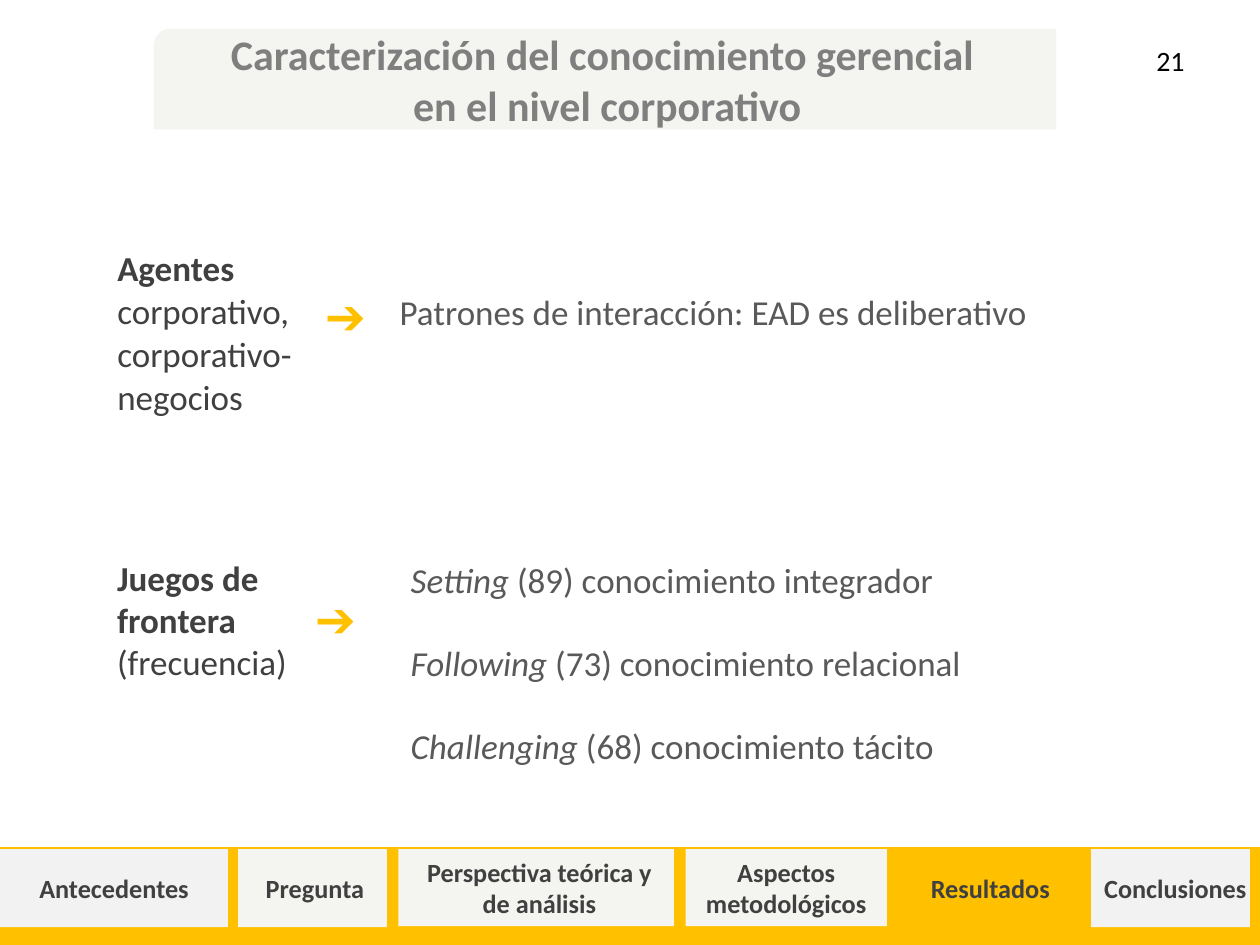
from lxml import etree
from pptx import Presentation
from pptx.dml.color import RGBColor
from pptx.enum.shapes import MSO_CONNECTOR, MSO_SHAPE
from pptx.enum.text import MSO_ANCHOR, PP_ALIGN
from pptx.oxml.ns import qn
from pptx.util import Cm, Pt

RECT, ROUND1 = MSO_SHAPE.RECTANGLE, MSO_SHAPE.ROUND_1_RECTANGLE
LINE = MSO_CONNECTOR.STRAIGHT
TOP, MIDDLE, BOTTOM = MSO_ANCHOR.TOP, MSO_ANCHOR.MIDDLE, MSO_ANCHOR.BOTTOM
LEFT, CENTER, RIGHT = PP_ALIGN.LEFT, PP_ALIGN.CENTER, PP_ALIGN.RIGHT

AMBER, PALE, LIGHT = "FFC000", "F4F4F0", "F2F2F2"
DARK, GREY, MID, BLACK = "404040", "595959", "7F7F7F", "000000"


def rgb(value):
    return RGBColor.from_string(value)


def write(tf, paragraphs, size, color, align=LEFT, anchor=TOP, gap=0):
    for key, value in {"word_wrap": True, "vertical_anchor": anchor}.items():
        setattr(tf, key, value)
    for i, runs in enumerate(paragraphs):
        p = tf.paragraphs[0] if i == 0 else tf.add_paragraph()
        p.alignment = align
        p.space_before = Pt(gap if i else 0)
        for text, style in runs:
            r = p.add_run()
            r.text = text
            r.font.color.rgb = rgb(color)
            for key, value in {"name": "Calibri", "size": Pt(size), **style}.items():
                setattr(r.font, key, value)


prs = Presentation()
prs.slide_width, prs.slide_height = Cm(25.4), Cm(19.05)
s = prs.slides.add_slide(prs.slide_layouts[6])
bold, italic, plain = {"bold": True}, {"italic": True}, {}

gf = s.shapes.add_table(1, 2, Cm(2.11), Cm(4.88), Cm(21.62), Cm(4.65))
table = gf.table
for flag in ("first_row", "horz_banding"):
    setattr(table, flag, False)
table.rows[0].height = Cm(4.65)
cells = [
    (5.69, 0.13, DARK, [[("Agentes", bold)], [("corporativo, corporativo-negocios", plain)]]),
    (15.93, 1, GREY, [[("Patrones de interacción: EAD es deliberativo", plain)]]),
]
for i, (width, margin, color, paragraphs) in enumerate(cells):
    table.columns[i].width = Cm(width)
    cell = table.cell(0, i)
    cell.margin_top = Cm(margin)
    write(cell.text_frame, paragraphs, 20, color)
    cell.vertical_anchor = TOP
    tcPr = cell._tc.get_or_add_tcPr()
    for side in ("lnL", "lnR", "lnT", "lnB"):
        etree.SubElement(etree.SubElement(tcPr, qn("a:" + side)), qn("a:noFill"))
    cell.fill.background()

sp = s.shapes.add_shape(ROUND1, Cm(3.1), Cm(0.58), Cm(18.19), Cm(2.03))
sp._element.spPr.xfrm.set("flipH", "1")
sp.shadow.inherit = False
sp.fill.solid()
sp.fill.fore_color.rgb = rgb(PALE)
sp.line.fill.background()
heading = [[("Caracterización del conocimiento gerencial ", bold)],
           [("en el nivel corporativo", bold)]]
write(sp.text_frame, heading, 24, MID, CENTER, MIDDLE)

games = [
    ("Setting", " (89) conocimiento integrador"),
    ("Following", " (73) conocimiento relacional"),
    ("Challenging ", "(68) conocimiento tácito"),
]
texts = [
    (6.3, 4.42, 1.19, 2.64, [[("➔", plain)]], 28, AMBER, LEFT, BOTTOM, 0),
    (6.1, 11.73, 1.19, 1.45, [[("➔", plain)]], 28, AMBER, LEFT, TOP, 0),
    (2.11, 11.1, 4.39, 2.82, [[("Juegos de frontera ", bold), ("(frecuencia)", plain)]],
     20, DARK, LEFT, TOP, 0),
    (8.03, 11.13, 15.29, 4.52, [[(name, italic), (rest, plain)] for name, rest in games],
     20, GREY, LEFT, TOP, 23.6),
    (1.27, 0.76, 22.86, 3.18, [[("21", plain)]], 16, BLACK, RIGHT, TOP, 0),
]
for x, y, w, h, *content in texts:
    sp = s.shapes.add_textbox(Cm(x), Cm(y), Cm(w), Cm(h))
    write(sp.text_frame, *content)

tabs = [
    ("", 0, 25.4, 1.91, AMBER, 0.25),
    ("Antecedentes", 0, 4.6, 1.57, LIGHT, 0.25),
    ("Pregunta", 4.8, 3.1, 1.57, PALE, 0.25),
    ("Perspectiva teórica y de análisis", 8.03, 5.69, 1.55, PALE, 0.4),
    ("Aspectos metodológicos", 13.82, 4.06, 1.55, PALE, 0.25),
    ("Resultados", 18.11, 3.71, 1.57, AMBER, 0.25),
    ("Conclusiones", 21.89, 3.61, 1.57, LIGHT, 0.25),
]
for label, x, w, h, color, margin in tabs:
    sp = s.shapes.add_shape(RECT, Cm(x), Cm(17.12), Cm(w), Cm(h))
    sp.shadow.inherit = False
    sp.fill.solid()
    sp.fill.fore_color.rgb = rgb(color)
    if label:
        sp.line.fill.background()
        tf = sp.text_frame
        tf.margin_left = tf.margin_right = Cm(margin)
        write(tf, [[(label, bold)]], 15, DARK, CENTER, MIDDLE)
    else:
        sp.line.color.rgb = rgb(color)
        sp.line.width = Pt(2)

for x in (4.7, 7.9, 13.69, 18.11, 21.89, 25.3):
    divider = s.shapes.add_connector(LINE, Cm(x), Cm(17.12), Cm(x), Cm(19.05))
    divider.line.color.rgb = rgb(AMBER)
    divider.line.width = Pt(6)
    etree.SubElement(divider._element.spPr, qn("a:effectLst"))

prs.save("out.pptx")
